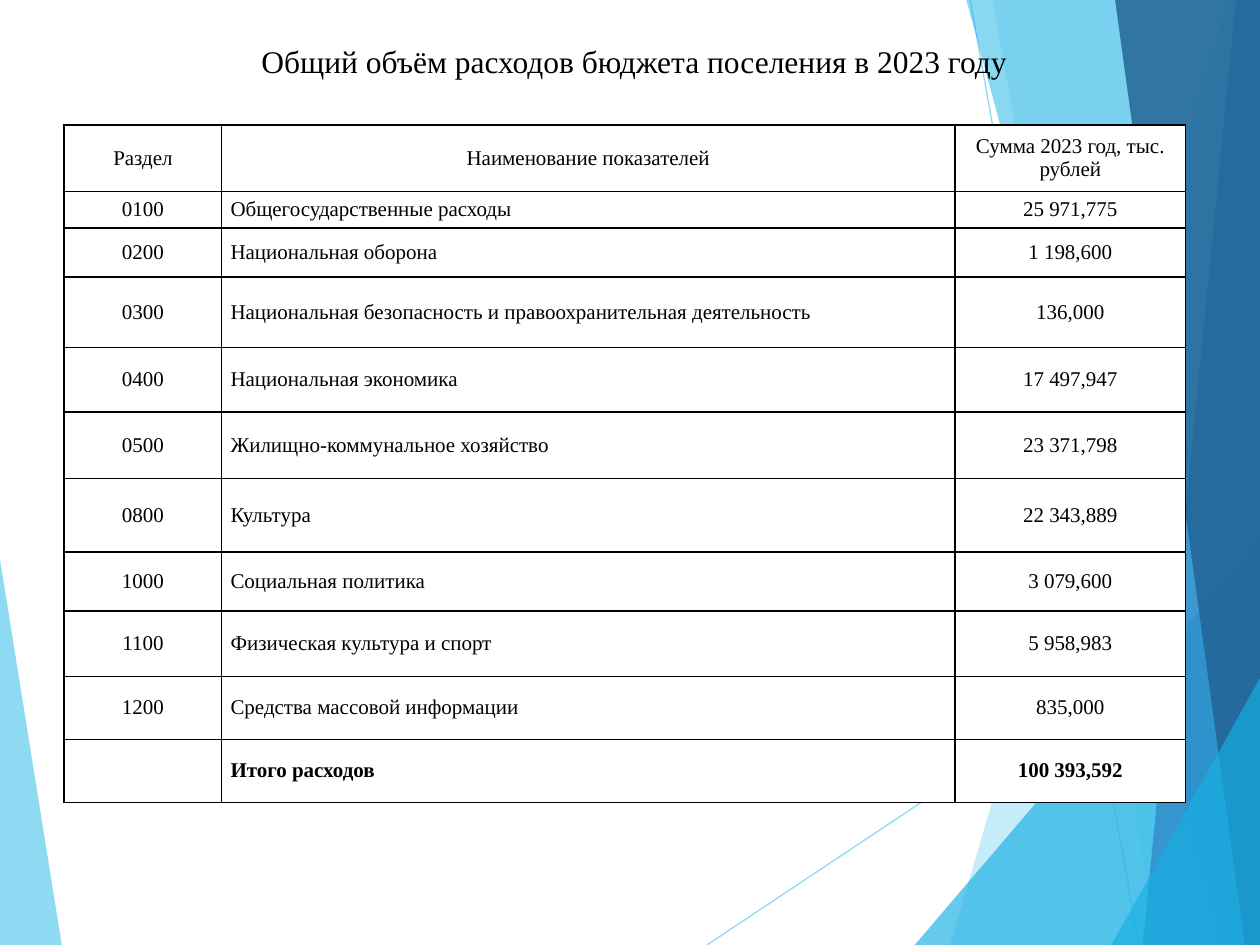
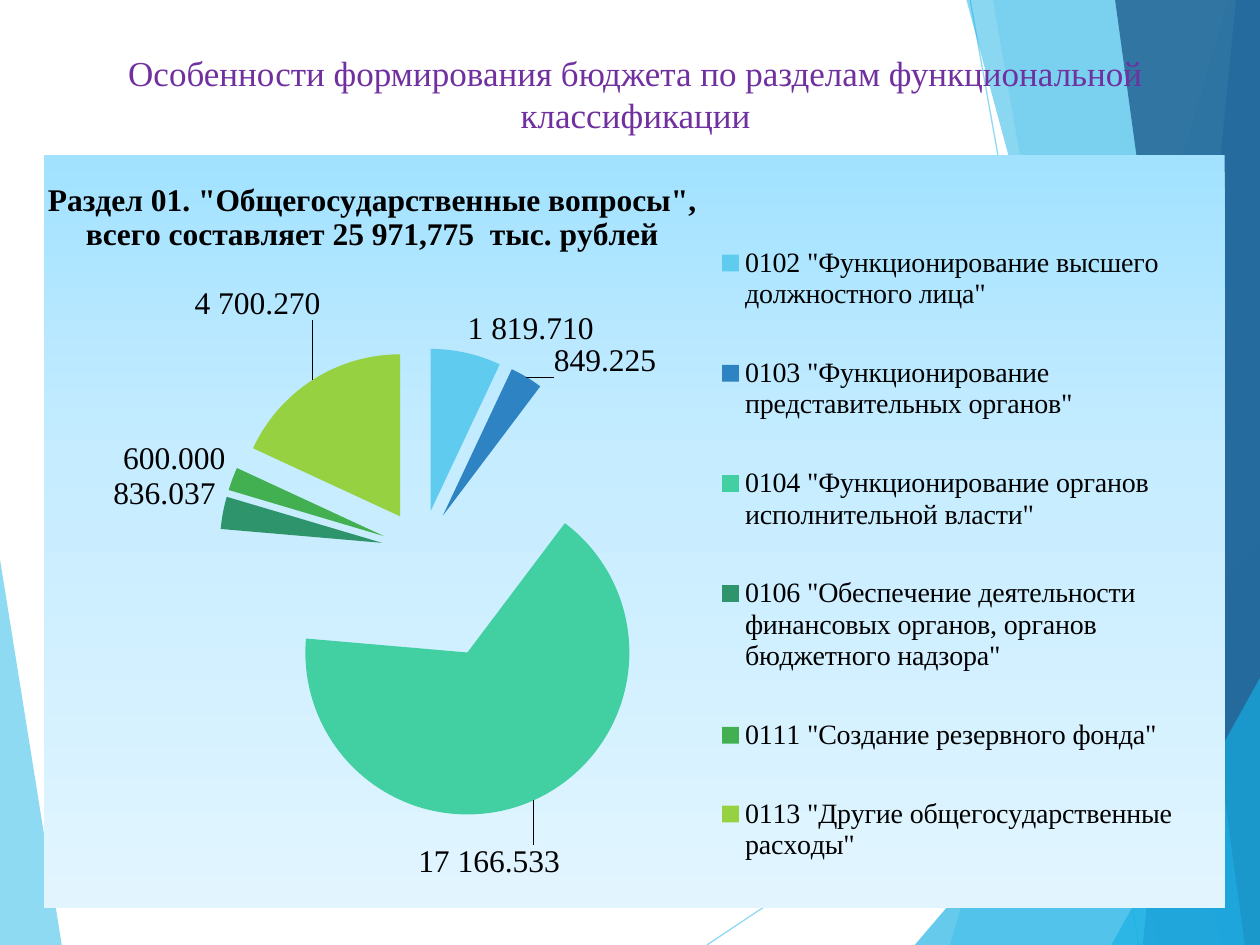
import dataclasses
import itertools
import typing

import pptx
import pptx.chart.data
import pptx.dml.color
import pptx.enum.chart
import pptx.enum.shapes
import pptx.enum.text
import pptx.oxml
import pptx.oxml.ns
import pptx.slide
import pptx.util

Inches = pptx.util.Inches
ALIGN = pptx.enum.text.PP_ALIGN
FONT = "Times New Roman"
BLACK, WHITE, PURPLE = "000000", "FFFFFF", "7030A0"
SKY, AZURE, BLUE, NAVY = "5FCBEF", "17B0E4", "2E83C3", "226292"
Point = tuple[float, float]


@dataclasses.dataclass(frozen=True)
class Facet:
    corners: tuple[Point, ...]
    color: str
    opacity: int


@dataclasses.dataclass(frozen=True)
class Ray:
    start: Point
    end: Point


@dataclasses.dataclass(frozen=True)
class Sector:
    name: str
    amount: float
    color: str
    explosion: int = 25
    label_shift: Point | None = None


DECOR = (
    Facet(((0, 4.44), (0.49, 7.5), (0, 7.5)), SKY, 70),
    Ray((5.61, 7.5), (10, 4.58)),
    Ray((7.7, 0), (9.04, 7.5)),
    Facet(((9.75, 0), (7.54, 7.5), (10, 7.5), (10, 0)), SKY, 36),
    Facet(((7.88, 0), (9.19, 7.5), (10, 7.5), (10, 0)), SKY, 20),
    Facet(((7.26, 7.5), (10, 4.29), (10, 7.5)), AZURE, 66),
    Facet(((7.67, 0), (9.7, 7.5), (10, 7.5), (10, 0)), AZURE, 50),
    Facet(((9.81, 0), (9.07, 7.5), (10, 7.5), (10, 0)), BLUE, 70),
    Facet(((8.85, 0), (9.88, 7.5), (10, 7.5), (10, 0)), NAVY, 82),
    Facet(((8.82, 7.5), (10, 5.38), (10, 7.5)), AZURE, 66),
)

COLUMN_WIDTHS = (1.25, 5.82, 1.83)
ROW_HEIGHTS = (0.53, 0.29, 0.39, 0.56, 0.51, 0.53, 0.58, 0.47, 0.52, 0.5, 0.5)
EXPENSES = (
    ("Раздел", "Наименование показателей", "Сумма 2023 год, тыс. рублей"),
    ("0100", "Общегосударственные расходы", "25 971,775"),
    ("0200", "Национальная оборона", "1 198,600"),
    ("0300", "Национальная безопасность и правоохранительная деятельность", "136,000"),
    ("0400", "Национальная экономика", "17 497,947"),
    ("0500", "Жилищно-коммунальное хозяйство", "23 371,798"),
    ("0800", "Культура", "22 343,889"),
    ("1000", "Социальная политика", "3 079,600"),
    ("1100", "Физическая культура и спорт", "5 958,983"),
    ("1200", "Средства массовой информации", "835,000"),
    ("", "Итого расходов", "100 393,592"),
)

SECTORS = (
    Sector('0102 "Функционирование высшего должностного лица"', 1819.71, SKY),
    Sector('0103 "Функционирование представительных органов"', 849.225, BLUE,
           label_shift=(0.02, 0.01)),
    Sector('0104 "Функционирование органов исполнительной власти"', 17166.533, "42D0A2",
           explosion=69, label_shift=(-0.1, 0.05)),
    Sector('0106 "Обеспечение деятельности финансовых органов, органов бюджетного надзора"',
           836.037, "2E946B"),
    Sector('0111 "Создание резервного фонда"', 600, "42B051"),
    Sector('0113 "Другие общегосударственные расходы"', 4700.27, "96D141",
           label_shift=(0.01, -0.07)),
)
AMOUNT_FORMAT = r"[>=1000]#\ ##0.000;0.000"
CHART_GRADIENT = ((0, "A2E2FF"), (40, "C5ECFF"), (100, "E2F5FF"))


def rgb(color: str) -> pptx.dml.color.RGBColor:
    return pptx.dml.color.RGBColor.from_string(color)


def xml(markup: str) -> typing.Any:
    namespaces = pptx.oxml.ns.nsdecls("a", "c")
    return pptx.oxml.parse_xml(f"<a:root {namespaces}>{markup}</a:root>")[0]


def style_font(font: typing.Any, size: float, color: str = BLACK, bold: bool = False) -> None:
    font.name = FONT
    font.size = pptx.util.Pt(size)
    font.bold = bold
    font.color.rgb = rgb(color)


def write_text(frame: typing.Any, text: str, *, size: float, color: str = BLACK,
               bold: bool = False, align: typing.Any = ALIGN.CENTER) -> None:
    frame.text = text
    for paragraph in frame.paragraphs:
        paragraph.alignment = align
        style_font(paragraph.font, size, color, bold)
        for run in paragraph.runs:
            style_font(run.font, size, color, bold)


def set_opacity(element: typing.Any, percent: int) -> None:
    for color in element.xpath(".//a:srgbClr"):
        color.append(xml(f'<a:alpha val="{percent * 1000}"/>'))


def draw_facet(slide: pptx.slide.Slide, facet: Facet) -> typing.Any:
    first, *others = [(Inches(x), Inches(y)) for x, y in facet.corners]
    outline = slide.shapes.build_freeform(*first)
    outline.add_line_segments(others, close=True)
    shape = outline.convert_to_shape()
    shape.fill.solid()
    shape.fill.fore_color.rgb = rgb(facet.color)
    shape.line.fill.background()
    shape.shadow.inherit = False
    set_opacity(shape.element, facet.opacity)
    return shape.element


def draw_ray(slide: pptx.slide.Slide, ray: Ray) -> typing.Any:
    connector = slide.shapes.add_connector(
        pptx.enum.shapes.MSO_CONNECTOR.STRAIGHT,
        *(Inches(value) for value in ray.start + ray.end))
    connector.line.color.rgb = rgb(SKY)
    connector.line.width = pptx.util.Pt(0.75)
    connector.element.spPr.append(xml("<a:effectLst/>"))
    set_opacity(connector.element, 70)
    return connector.element


def decorate_layout(layout: pptx.slide.SlideLayout, slide: pptx.slide.Slide) -> None:
    for order, item in enumerate(DECOR):
        draw = draw_ray if isinstance(item, Ray) else draw_facet
        element = draw(slide, item)
        element.xpath(".//p:cNvPr")[0].set("id", str(100 + order))
        layout.shapes.element.insert(2 + order, element)


def set_title(slide: pptx.slide.Slide, text: str, left: float, top: float,
              width: float, height: float, **text_format: typing.Any) -> None:
    title = slide.shapes.title
    title.left, title.top = Inches(left), Inches(top)
    title.width, title.height = Inches(width), Inches(height)
    title.text_frame.auto_size = pptx.enum.text.MSO_AUTO_SIZE.NONE
    title.text_frame.vertical_anchor = pptx.enum.text.MSO_ANCHOR.TOP
    write_text(title.text_frame, text, **text_format)


def format_cell(cell: typing.Any, text: str, **text_format: typing.Any) -> None:
    cell.fill.solid()
    cell.fill.fore_color.rgb = rgb(WHITE)
    cell.vertical_anchor = pptx.enum.text.MSO_ANCHOR.MIDDLE
    cell.margin_left = cell.margin_right = Inches(0.07)
    cell.margin_top = cell.margin_bottom = 0
    write_text(cell.text_frame, text, size=12, **text_format)
    properties = cell._tc.get_or_add_tcPr()
    for position, side in enumerate("LRTB"):
        properties.insert(position, xml(
            f'<a:ln{side} w="12700"><a:solidFill><a:srgbClr val="{BLACK}"/>'
            f'</a:solidFill></a:ln{side}>'))


def add_expense_table(slide: pptx.slide.Slide) -> None:
    table = slide.shapes.add_table(
        len(EXPENSES), len(COLUMN_WIDTHS), Inches(0.51), Inches(0.99),
        Inches(sum(COLUMN_WIDTHS)), Inches(sum(ROW_HEIGHTS))).table
    table.first_row = table.horz_banding = False
    for column, width in zip(table.columns, COLUMN_WIDTHS):
        column.width = Inches(width)
    for row, height in zip(table.rows, ROW_HEIGHTS):
        row.height = Inches(height)
    last_row = len(EXPENSES) - 1
    for row, column in itertools.product(range(len(EXPENSES)), range(len(COLUMN_WIDTHS))):
        is_name = column == 1 and row > 0
        format_cell(table.cell(row, column), EXPENSES[row][column], bold=row == last_row,
                    align=ALIGN.LEFT if is_name else ALIGN.CENTER)


def set_layout(part: typing.Any, index: int, *, edge: bool = True, **place: float) -> None:
    for layout in part.xpath("c:layout"):
        part.remove(layout)
    modes = '<c:xMode val="edge"/><c:yMode val="edge"/>' if edge else ""
    values = "".join(f'<c:{key} val="{value}"/>' for key, value in place.items())
    target = '<c:layoutTarget val="inner"/>' if part.tag.endswith("plotArea") else ""
    part.insert(index, xml(
        f"<c:layout><c:manualLayout>{target}{modes}{values}</c:manualLayout></c:layout>"))


def format_sectors(series: typing.Any) -> None:
    outside = pptx.enum.chart.XL_LABEL_POSITION.OUTSIDE_END
    labels = series.data_labels
    labels.show_value = True
    labels.number_format = AMOUNT_FORMAT
    labels.number_format_is_linked = False
    labels.position = outside
    style_font(labels.font, 18)
    for index, sector in enumerate(SECTORS):
        point = series.points[index]
        point.format.fill.solid()
        point.format.fill.fore_color.rgb = rgb(sector.color)
        fill = series._element.xpath(f"c:dPt[c:idx/@val={index}]/c:spPr")[0]
        fill.addprevious(xml(f'<c:explosion val="{sector.explosion}"/>'))
        if sector.label_shift:
            style_font(point.data_label.font, 18)
            point.data_label.position = outside
            label = series._element.xpath(f".//c:dLbl[c:idx/@val={index}]")[0]
            shift_x, shift_y = sector.label_shift
            set_layout(label, 1, edge=False, x=shift_x, y=shift_y)
            label.insert(2, xml(f'<c:numFmt formatCode="{AMOUNT_FORMAT}" sourceLinked="0"/>'))


def add_section_chart(slide: pptx.slide.Slide) -> None:
    amounts = pptx.chart.data.CategoryChartData()
    amounts.categories = [sector.name for sector in SECTORS]
    amounts.add_series("Series 1", [sector.amount for sector in SECTORS])
    chart = slide.shapes.add_chart(
        pptx.enum.chart.XL_CHART_TYPE.PIE, Inches(0.35), Inches(1.23),
        Inches(9.37), Inches(5.98), amounts).chart
    style_font(chart.font, 18)
    chart.plots[0].vary_by_categories = True
    format_sectors(chart.plots[0].series[0])

    chart.has_title = True
    write_text(chart.chart_title.text_frame,
               'Раздел 01. "Общегосударственные вопросы",\n'
               "всего составляет 25 971,775  тыс. рублей", size=18, bold=True)
    chart.has_legend = True
    chart.legend.position = pptx.enum.chart.XL_LEGEND_POSITION.RIGHT
    chart.legend.include_in_layout = False
    style_font(chart.legend.font, 16)

    frame = chart.element.xpath("c:chart")[0]
    set_layout(frame.xpath("c:title")[0], 1, x=0, y=0.03)
    set_layout(frame.xpath("c:plotArea")[0], 0, x=0.18, y=0.31, w=0.28, h=0.43)
    set_layout(frame.xpath("c:legend")[0], 1, x=0.56, y=0.06, w=0.41, h=0.94)
    stops = "".join(f'<a:gs pos="{position * 1000}"><a:srgbClr val="{color}"/></a:gs>'
                    for position, color in CHART_GRADIENT)
    frame.addnext(xml(
        f'<c:spPr><a:gradFill><a:gsLst>{stops}</a:gsLst><a:lin ang="5400000" scaled="0"/>'
        "</a:gradFill><a:ln><a:noFill/></a:ln></c:spPr>"))


def main() -> None:
    deck = pptx.Presentation()
    deck.slide_width, deck.slide_height = Inches(10), Inches(7.5)
    title_only = deck.slide_layouts[5]

    expenses = deck.slides.add_slide(title_only)
    decorate_layout(title_only, expenses)
    set_title(expenses, "Общий объём расходов бюджета поселения в 2023 году",
              0.35, 0.28, 9.37, 0.47, size=18)
    add_expense_table(expenses)

    section = deck.slides.add_slide(title_only)
    set_title(section, "Особенности формирования бюджета по разделам функциональной "
              "классификации", 0.28, 0.36, 9.53, 0.79, size=20, color=PURPLE)
    add_section_chart(section)
    deck.save("out.pptx")


if __name__ == "__main__":
    main()
